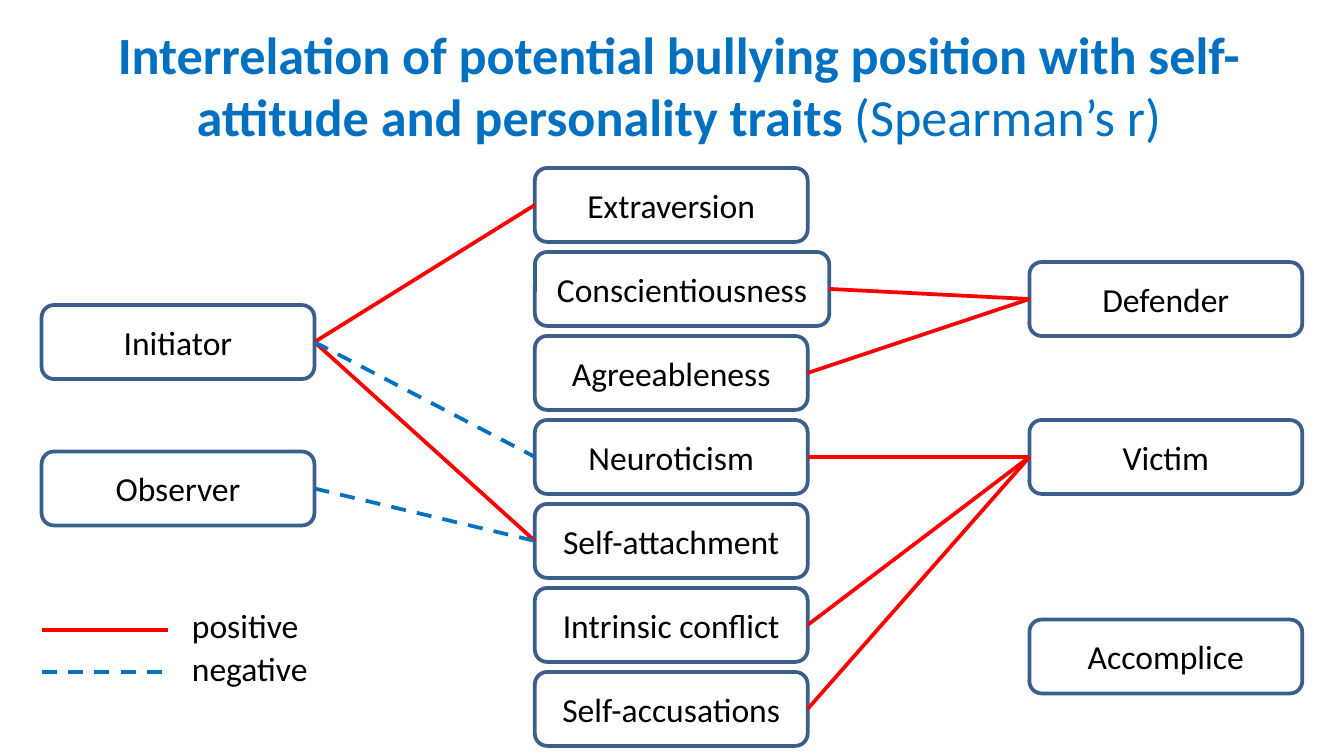
from lxml.etree import SubElement
from pptx import Presentation
from pptx.dml.color import RGBColor
from pptx.enum.dml import MSO_LINE_DASH_STYLE as Dash
from pptx.enum.shapes import MSO_CONNECTOR as Connector, MSO_SHAPE as Shape
from pptx.enum.text import MSO_ANCHOR as Anchor, MSO_AUTO_SIZE as AutoSize, PP_ALIGN as Align
from pptx.oxml.ns import qn
from pptx.util import Inches, Pt

RED, BLUE, OUTLINE, BLACK = "FF0000", "0070C0", "3A5F8C", "000000"
BOX_WIDTH, BOX_HEIGHT = 2.03, 0.55
LEFT_SITE, RIGHT_SITE = 1, 3

TRAITS = ["Extraversion", "Conscientiousness", "Agreeableness", "Neuroticism",
          "Self-attachment", "Intrinsic conflict", "Self-accusations"]
TRAIT_LEFT, TRAIT_TOP, TRAIT_STEP = 3.98, 1.25, 5 / 8

# Victim is level with Neuroticism
POSITIONS = {
    "Initiator": (0.31, 2.27),
    "Observer": (0.31, 3.36),
    "Defender": (7.66, 1.95),
    "Victim": (7.66, TRAIT_TOP + TRAITS.index("Neuroticism") * TRAIT_STEP),
    "Accomplice": (7.66, 4.61),
}

# Left box, right box, whether the correlation is positive
CORRELATIONS = [
    ("Agreeableness", "Defender", True),
    ("Neuroticism", "Victim", True),
    ("Conscientiousness", "Defender", True),
    ("Self-accusations", "Victim", True),
    ("Intrinsic conflict", "Victim", True),
    ("Initiator", "Self-attachment", True),
    ("Initiator", "Extraversion", True),
    ("Initiator", "Neuroticism", False),
    ("Observer", "Self-attachment", False),
]


def rgb(value):
    return RGBColor.from_string(value)


def add_text(paragraph, text, size=18, color=BLACK, bold=False, align=Align.CENTER):
    paragraph.alignment = align
    run = paragraph.add_run()
    run.text = text
    run.font.name = "Calibri"
    run.font.size = Pt(size)
    run.font.bold = bold
    run.font.color.rgb = rgb(color)


def add_title(slide):
    title = slide.shapes.title
    title.left, title.top = Inches(0.55), Inches(0.16)
    title.width, title.height = Inches(9), Inches(0.94)
    frame = title.text_frame
    frame.auto_size = AutoSize.NONE
    frame.vertical_anchor = Anchor.MIDDLE
    heading = frame.paragraphs[0]
    add_text(heading, "Interrelation of potential bullying position with "
             "self-attitude and personality traits ", size=28, color=BLUE, bold=True)
    add_text(heading, "(Spearman’s r)", size=28, color=BLUE)


def add_box(slide, label, left, top, width=BOX_WIDTH):
    box = slide.shapes.add_shape(Shape.ROUNDED_RECTANGLE, Inches(left), Inches(top),
                                 Inches(width), Inches(BOX_HEIGHT))
    box.shadow.inherit = False
    box.fill.background()
    box.line.color.rgb = rgb(OUTLINE)
    box.line.width = Pt(2)
    box.text_frame.vertical_anchor = Anchor.MIDDLE
    add_text(box.text_frame.paragraphs[0], label)
    return box


def add_line(slide, positive, start=(0, 0), end=(0, 0)):
    line = slide.shapes.add_connector(Connector.STRAIGHT, *map(Inches, start + end))
    line.line.color.rgb = rgb(RED if positive else BLUE)
    line.line.width = Pt(2)
    if not positive:
        line.line.dash_style = Dash.DASH
    SubElement(line._element.spPr, qn("a:effectLst"))
    return line


def add_legend_entry(slide, label, positive, line_y, text_top, text_width):
    add_line(slide, positive, (0.31, line_y), (1.25, line_y))
    caption = slide.shapes.add_textbox(Inches(1.33), Inches(text_top),
                                       Inches(text_width), Inches(0.4))
    caption.text_frame.word_wrap = False
    caption.text_frame.auto_size = AutoSize.SHAPE_TO_FIT_TEXT
    add_text(caption.text_frame.paragraphs[0], label, align=Align.LEFT)


def main():
    prs = Presentation()
    # Widescreen, 16:9
    prs.slide_width, prs.slide_height = Inches(10), Inches(10 * 9 / 16)
    slide = prs.slides.add_slide(prs.slide_layouts[5])
    add_title(slide)

    # Bullying positions on both sides, traits stacked in the middle
    boxes = {label: add_box(slide, label, *place) for label, place in POSITIONS.items()}
    for row, trait in enumerate(TRAITS):
        width = 2.19 if trait == "Conscientiousness" else BOX_WIDTH
        boxes[trait] = add_box(slide, trait, TRAIT_LEFT, TRAIT_TOP + row * TRAIT_STEP, width)

    # Legend
    add_legend_entry(slide, "positive", True, 4.69, 4.45, 1)
    add_legend_entry(slide, "negative", False, 5, 4.77, 1.07)

    # Correlations, glued to the facing sides of the boxes
    for source, target, positive in CORRELATIONS:
        link = add_line(slide, positive)
        link.begin_connect(boxes[source], RIGHT_SITE)
        link.end_connect(boxes[target], LEFT_SITE)

    prs.save("out.pptx")


if __name__ == "__main__":
    main()
